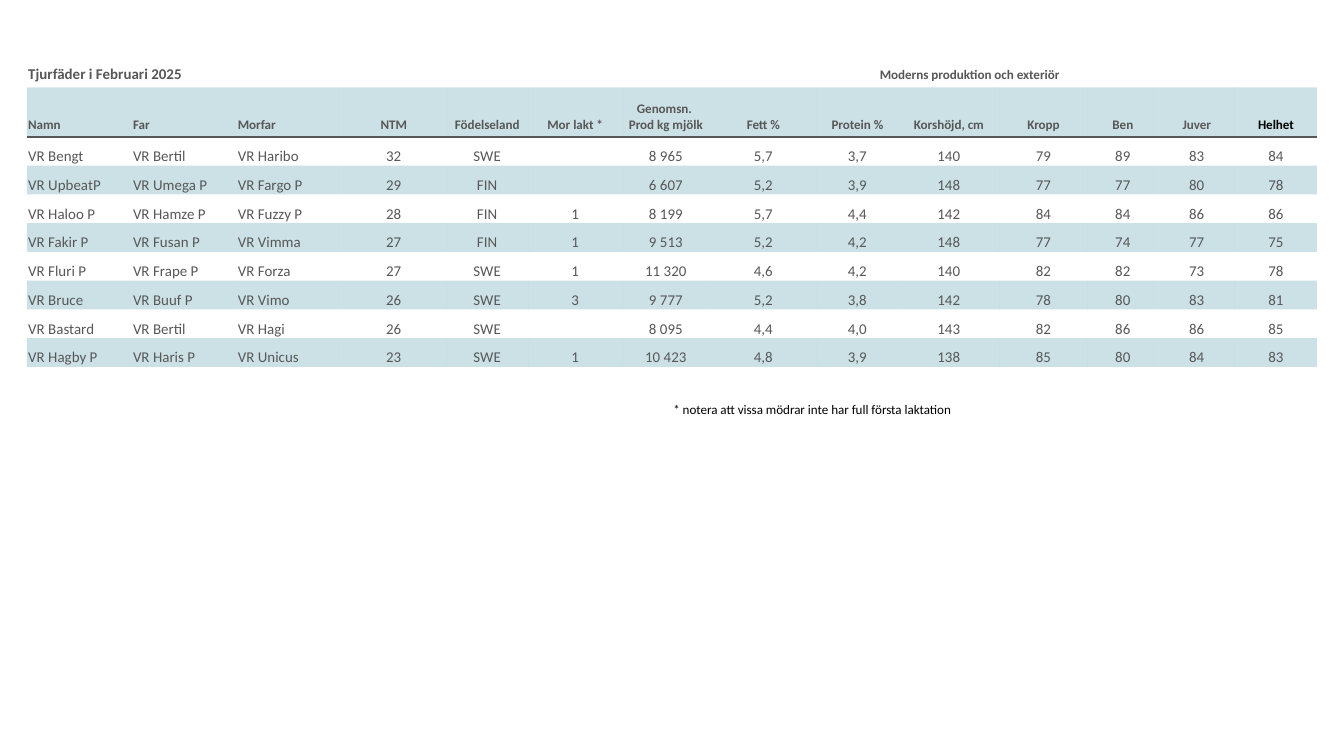
from lxml.etree import SubElement
from pptx import Presentation
from pptx.dml.color import RGBColor
from pptx.enum.text import MSO_ANCHOR as Anchor, PP_ALIGN as Align
from pptx.oxml import parse_xml
from pptx.oxml.ns import nsdecls, qn
from pptx.util import Inches, Pt

GREY = RGBColor(0x57, 0x57, 0x57)
BLACK = RGBColor(0, 0, 0)
TEAL = RGBColor(0x00, 0x6B, 0x85)
PLAIN = "{2D5ABB26-0587-4C30-8999-92F81FD0307C}"

WIDTHS = [0.78, 0.78, 0.78, 0.78, 0.61, 0.7, 0.65, 0.8, 0.6, 0.76, 0.65, 0.53, 0.57, 0.61]
HEADS = ["Namn", "Far", "Morfar", "NTM", "Födelseland", "Mor lakt *",
         "Genomsn. \nProd kg mjölk", "Fett %", "Protein %", "Korshöjd, cm",
         "Kropp", "Ben", "Juver", "Helhet"]
BULLS = [
    ["VR Bengt", "VR Bertil", "VR Haribo", "32", "SWE", "", "8 965", "5,7", "3,7", "140", "79", "89", "83", "84"],
    ["VR UpbeatP", "VR Umega P", "VR Fargo P", "29", "FIN", "", "6 607", "5,2", "3,9", "148", "77", "77", "80", "78"],
    ["VR Haloo P", "VR Hamze P", "VR Fuzzy P", "28", "FIN", "1", "8 199", "5,7", "4,4", "142", "84", "84", "86", "86"],
    ["VR Fakir P", "VR Fusan P", "VR Vimma", "27", "FIN", "1", "9 513", "5,2", "4,2", "148", "77", "74", "77", "75"],
    ["VR Fluri P", "VR Frape P", "VR Forza", "27", "SWE", "1", "11 320", "4,6", "4,2", "140", "82", "82", "73", "78"],
    ["VR Bruce", "VR Buuf P", "VR Vimo", "26", "SWE", "3", "9 777", "5,2", "3,8", "142", "78", "80", "83", "81"],
    ["VR Bastard", "VR Bertil", "VR Hagi", "26", "SWE", "", "8 095", "4,4", "4,0", "143", "82", "86", "86", "85"],
    ["VR Hagby P", "VR Haris P", "VR Unicus", "23", "SWE", "1", "10 423", "4,8", "3,9", "138", "85", "80", "84", "83"],
]


def write(cell, text, size=8, color=GREY, bold=False, align=Align.LEFT, foot=0):
    cell.vertical_anchor = Anchor.BOTTOM
    cell.margin_left = cell.margin_right = cell.margin_top = Inches(0.01)
    cell.margin_bottom = Inches(foot)
    para = cell.text_frame.paragraphs[0]
    para.text = text
    para.alignment = align
    for run in para.runs:
        font = run.font
        font.name, font.size, font.bold = "Calibri", Pt(size), bold
        font.color.rgb = color
    for gap in para._p.findall(qn("a:br")):
        SubElement(gap, qn("a:rPr"), sz=str(size * 100))
    if not text:
        para._p.get_or_add_endParaRPr().set("sz", str(size * 100))


class Sheet:
    def __init__(self, slide, tint=TEAL, rule=GREY):
        self.slide, self.tint, self.rule = slide, tint, rule

    def table(self, left, top, widths, heights):
        frame = self.slide.shapes.add_table(
            len(heights), len(widths), Inches(left), Inches(top),
            Inches(sum(widths)), Inches(sum(heights)))
        table = frame.table
        table.first_row = table.horz_banding = False
        table._tbl.tblPr.find(qn("a:tableStyleId")).text = PLAIN
        for col, width in zip(table.columns, widths):
            col.width = Inches(width)
        for row, height in zip(table.rows, heights):
            row.height = Inches(height)
        for cell in table.iter_cells():
            cell.fill.background()
        return table

    def shade(self, cell):
        cell.fill.solid()
        cell.fill.fore_color.rgb = self.tint
        color = cell._tc.tcPr.find(qn("a:solidFill")).find(qn("a:srgbClr"))
        SubElement(color, qn("a:alpha"), val="20000")

    def edge(self, cell, side, drawn=True):
        paint = (f'<a:solidFill><a:srgbClr val="{self.rule}"/></a:solidFill>'
                 if drawn else "<a:noFill/>")
        cell._tc.get_or_add_tcPr().insert(0, parse_xml(
            f'<a:ln{side} {nsdecls("a")} w="12700">{paint}</a:ln{side}>'))


def main():
    prs = Presentation()
    prs.slide_width, prs.slide_height = Inches(10), Inches(10 * 9 / 16)
    sheet = Sheet(prs.slides.add_slide(prs.slide_layouts[6]))

    grid = sheet.table(0.2, 0.23, WIDTHS, [0.42, 0.37] + [0.214] * len(BULLS))
    for col in range(len(WIDTHS)):
        write(grid.cell(0, col), "")
    grid.cell(0, 0).merge(grid.cell(0, 2))
    grid.cell(0, 6).merge(grid.cell(0, 13))
    write(grid.cell(0, 0), "Tjurfäder i Februari 2025", bold=True, foot=0.03)
    write(grid.cell(0, 6), "Moderns produktion och exteriör", size=7, bold=True,
          align=Align.CENTER, foot=0.03)

    for row, texts in enumerate([HEADS] + BULLS, 1):
        for col, text in enumerate(texts):
            cell = grid.cell(row, col)
            align = Align.LEFT if col < 3 else Align.CENTER
            if row == 1:
                color = BLACK if text == "Helhet" else GREY
                write(cell, text, size=7, color=color, bold=True, align=align, foot=0.03)
                sheet.edge(cell, "B")
            else:
                write(cell, text, align=align)
            if row == 2:
                sheet.edge(cell, "B", drawn=False)
                sheet.edge(cell, "T")
            if row % 2:
                sheet.shade(cell)
    for cell in list(grid.iter_cells())[len(WIDTHS):2 * len(WIDTHS)]:
        sheet.shade(cell) if cell.fill.type is None else None

    note = sheet.table(5, 2.96, [3.58], [0.2])
    write(note.cell(0, 0), "* notera att vissa mödrar inte har full första laktation",
          size=7, color=BLACK, foot=0.05)
    prs.save("out.pptx")


if __name__ == "__main__":
    main()
